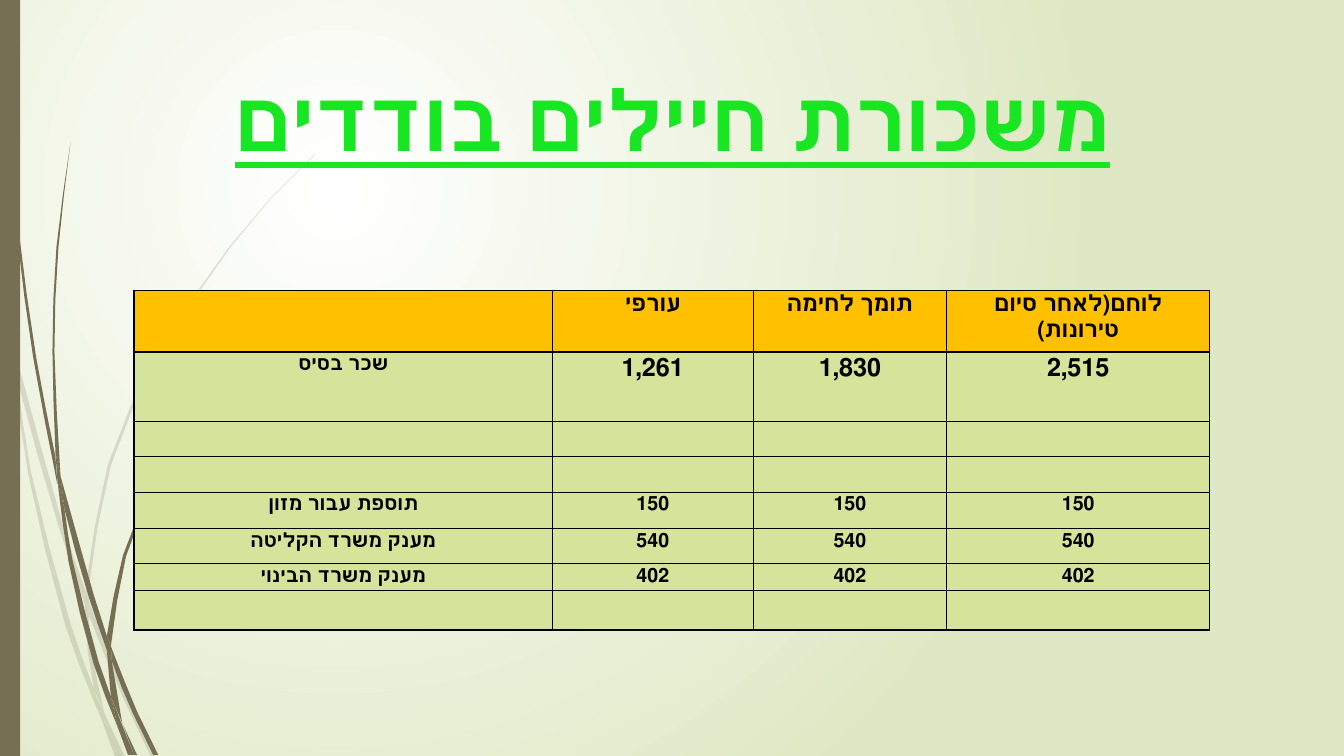
from lxml.etree import SubElement
from pptx import Presentation
from pptx.dml.color import RGBColor
from pptx.enum.shapes import MSO_SHAPE
from pptx.enum.text import MSO_ANCHOR, PP_ALIGN
from pptx.oxml import parse_xml
from pptx.oxml.ns import qn
from pptx.util import Inches, Pt

# Content
TITLE = "משכורת חיילים בודדים"
PAY_ROWS = [
    ("", "עורפי", "תומך לחימה", "לוחם(לאחר סיום טירונות)"),
    ("שכר בסיס", "1,261", "1,830", "2,515"),
    ("",) * 4,
    ("",) * 4,
    ("תוספת עבור מזון", "150", "150", "150"),
    ("מענק משרד הקליטה", "540", "540", "540"),
    ("מענק משרד הבינוי", "402", "402", "402"),
    ("",) * 4,
]
COLUMN_WIDTHS = [4.15, 1.99, 1.92, 2.61]
ROW_HEIGHTS = [0.26, 0.69, 0.35, 0.35, 0.36, 0.35, 0.25, 0.39]

FONT = "Arial"
BROWN, GREEN, BLACK = "766F54", "18E622", "000000"
HEADER_FILL, BODY_FILL = "FFC000", "D5E49A"
CENTRE_COLOUR, EDGE_COLOUR = "FFFFFF", "DFE8C4"
WIDTH, HEIGHT = 13.33, 7.5

# Each blade of grass: knots along one edge, then along the other
PALE_BLADES = [
    ([(0.11, 3.5), (0.09, 3.22), (0, 2.82)], [(0, 2.99), (0.1, 3.44)]),
    ([(0.14, 3.45), (0.17, 3.76), (0.58, 5.22), (0.84, 5.99)],
     [(0.85, 5.86), (0.62, 5.2), (0.14, 3.45)]),
    ([(0.88, 5.96), (0.88, 6.1), (1.23, 6.94), (1.5, 7.51)],
     [(1.55, 7.51), (1.27, 6.92), (0.92, 6.07)]),
    ([(1.05, 7.11), (1.19, 7.51)], [(1.24, 7.51)]),
    ([(0.11, 3.5), (0.28, 4.7), (0.65, 6.21), (0.92, 6.93), (1.01, 7.14)],
     [(0.93, 6.83), (0.7, 6.19), (0.31, 4.69), (0.17, 3.76)]),
    ([(0.84, 5.99), (0.87, 6.46), (0.93, 6.83), (1.05, 7.11)],
     [(1.03, 7.06), (0.91, 6.46), (0.88, 6.1)]),
    ([(0.88, 5.96), (0.88, 5.84), (1.1, 4.62), (1.6, 3.49), (2.29, 2.45),
      (2.68, 1.98), (3.12, 1.54)],
     [(3.12, 1.53), (2.68, 1.97), (2.28, 2.44), (1.58, 3.48), (1.07, 4.61), (0.85, 5.84)]),
    ([(1.01, 7.14), (1.14, 7.51)], [(1.19, 7.51)]),
    ([(0.88, 6.1), (0.88, 5.96)], [(0.85, 5.86), (0.84, 5.99)]),
    ([(0.93, 6.83), (1.01, 7.14), (1.19, 7.51)], [(1.05, 7.11), (0.96, 6.92)]),
]
DARK_BLADES = [
    ([(0.03, 0), (0.07, 1.1), (0.17, 2.33), (0.33, 3.55), (0.57, 4.81)],
     [(0.55, 4.53), (0.36, 3.55), (0.19, 2.32), (0.08, 1.09), (0.04, 0)]),
    ([(0.6, 4.72), (0.64, 5.05), (0.88, 5.92), (1.06, 6.45)],
     [(1.06, 6.31), (0.93, 5.9), (0.6, 4.72)]),
    ([(1.1, 6.41), (1.11, 6.56), (1.32, 7.08), (1.52, 7.49)],
     [(1.57, 7.49), (1.36, 7.06), (1.13, 6.49)]),
    ([(0.57, 4.77), (0.68, 5.57), (0.93, 6.59), (1.17, 7.22)],
     [(1.1, 6.91), (0.98, 6.57), (0.72, 5.56), (0.64, 5.05)]),
    ([(0.6, 4.72), (0.54, 3.49), (0.58, 2.45), (0.7, 1.41)],
     [(0.7, 1.41), (0.56, 2.45), (0.52, 3.49), (0.55, 4.49)]),
    ([(1.22, 7.19), (1.33, 7.49)], [(1.36, 7.49)]),
    ([(0.57, 4.77), (0.64, 5.05)], [(0.6, 4.72), (0.55, 4.49)]),
    ([(1.1, 6.41), (1.25, 5.52), (1.58, 4.76), (2.05, 4.06), (2.61, 3.44)],
     [(2.6, 3.44), (2.04, 4.05), (1.56, 4.74), (1.22, 5.51), (1.06, 6.31)]),
    ([(1.17, 7.22), (1.27, 7.49)], [(1.31, 7.49)]),
    ([(1.06, 6.45), (1.1, 6.91), (1.22, 7.19)], [(1.21, 7.16), (1.11, 6.56)]),
    ([(1.06, 6.45), (1.11, 6.56)], [(1.1, 6.41), (1.06, 6.31)]),
    ([(1.1, 6.91), (1.17, 7.22), (1.3, 7.49)], [(1.33, 7.49), (1.16, 7.06)]),
]


def colour(code):
    return RGBColor.from_string(code)


def paint(shape, code, alpha=100):
    shape.shadow.inherit = False
    shape.line.fill.background()
    shape.fill.solid()
    shape.fill.fore_color.rgb = colour(code)
    if alpha < 100:
        tint = shape.fill._xPr.find(qn("a:solidFill"))[0]
        SubElement(tint, qn("a:alpha"), val=str(alpha * 1000))


def smooth(knots):
    """The knots, with a bent midpoint in each long stretch."""
    padded = [knots[0], *knots, knots[-1]]
    points = [knots[0]]
    for a, b, c, d in zip(padded, padded[1:], padded[2:], padded[3:]):
        before, span, after = (abs(q[1] - p[1]) for p, q in ((a, b), (b, c), (c, d)))
        if span > 0.5:
            start, end = span / (span + before), span / (span + after)
            points.append(tuple(
                (q + r) / 2 + (start * (r - p) - end * (s - q)) / 8
                for p, q, r, s in zip(a, b, c, d)))
        points.append(c)
    return points


def add_blade(slide, edges, alpha):
    outline = [(Inches(x), Inches(y)) for edge in edges for x, y in smooth(edge)]
    builder = slide.shapes.build_freeform(*outline[0], scale=1.0)
    builder.add_line_segments(outline[1:], close=True)
    paint(builder.convert_to_shape(), BROWN, alpha)


def style_text(paragraph, size, code):
    paragraph.alignment = PP_ALIGN.CENTER
    font = paragraph.font
    font.name, font.size, font.bold = FONT, Pt(size), True
    font.color.rgb = colour(code)


def add_borders(cell):
    properties = cell._tc.get_or_add_tcPr()
    for side in ("lnL", "lnR", "lnT", "lnB"):
        line = SubElement(properties, qn(f"a:{side}"), w=str(Pt(1)))
        SubElement(SubElement(line, qn("a:solidFill")), qn("a:srgbClr"), val=BLACK)


def fill_cell(cell, text, row, column):
    add_borders(cell)
    cell.fill.solid()
    cell.fill.fore_color.rgb = colour(BODY_FILL if row else HEADER_FILL)
    cell.margin_left = cell.margin_right = Inches(0.07)
    cell.margin_top = cell.margin_bottom = 0
    cell.text = text
    paragraph = cell.text_frame.paragraphs[0]
    size = 16 if row == 0 else 18 if row == 1 and column else 14
    style_text(paragraph, size, BLACK)
    paragraph.line_spacing = 1.15
    paragraph._p.get_or_add_pPr().set("rtl", "1")


def set_background(slide):
    fill = slide.background.fill
    fill.gradient()
    for stop, code in zip(fill.gradient_stops, (CENTRE_COLOUR, EDGE_COLOUR)):
        stop.color.rgb = colour(code)
    gradient = fill._xPr.find(qn("a:gradFill"))
    gradient.replace(gradient.find(qn("a:lin")), parse_xml(
        '<a:path xmlns:a="http://schemas.openxmlformats.org/drawingml/2006/main" path="circle">'
        '<a:fillToRect l="50000" t="50000" r="100000" b="100000"/></a:path>'))


def main():
    deck = Presentation()
    deck.slide_width, deck.slide_height = Inches(WIDTH), Inches(HEIGHT)
    slide = deck.slides.add_slide(deck.slide_layouts[6])
    set_background(slide)

    # Grass and side bar
    for blades, alpha in ((PALE_BLADES, 20), (DARK_BLADES, 100)):
        for edges in blades:
            add_blade(slide, edges, alpha)
    bar = slide.shapes.add_shape(MSO_SHAPE.RECTANGLE, 0, 0, Inches(0.2), Inches(HEIGHT))
    paint(bar, BROWN)

    # Title
    title = slide.shapes.add_textbox(Inches(1.42), Inches(0.46), Inches(10.5), Inches(1.43))
    title.text_frame.word_wrap = True
    title.text_frame.vertical_anchor = MSO_ANCHOR.MIDDLE
    title.text_frame.text = TITLE
    heading = title.text_frame.paragraphs[0]
    style_text(heading, 60, GREEN)
    heading.font.underline = True

    # Pay table
    pay = slide.shapes.add_table(
        len(PAY_ROWS), len(COLUMN_WIDTHS), Inches(1.33), Inches(2.88),
        Inches(sum(COLUMN_WIDTHS)), Inches(sum(ROW_HEIGHTS))).table
    for column, width in zip(pay.columns, COLUMN_WIDTHS):
        column.width = Inches(width)
    for r, (height, texts) in enumerate(zip(ROW_HEIGHTS, PAY_ROWS)):
        pay.rows[r].height = Inches(height)
        for c, text in enumerate(texts):
            fill_cell(pay.cell(r, c), text, r, c)

    deck.save("out.pptx")


if __name__ == "__main__":
    main()
